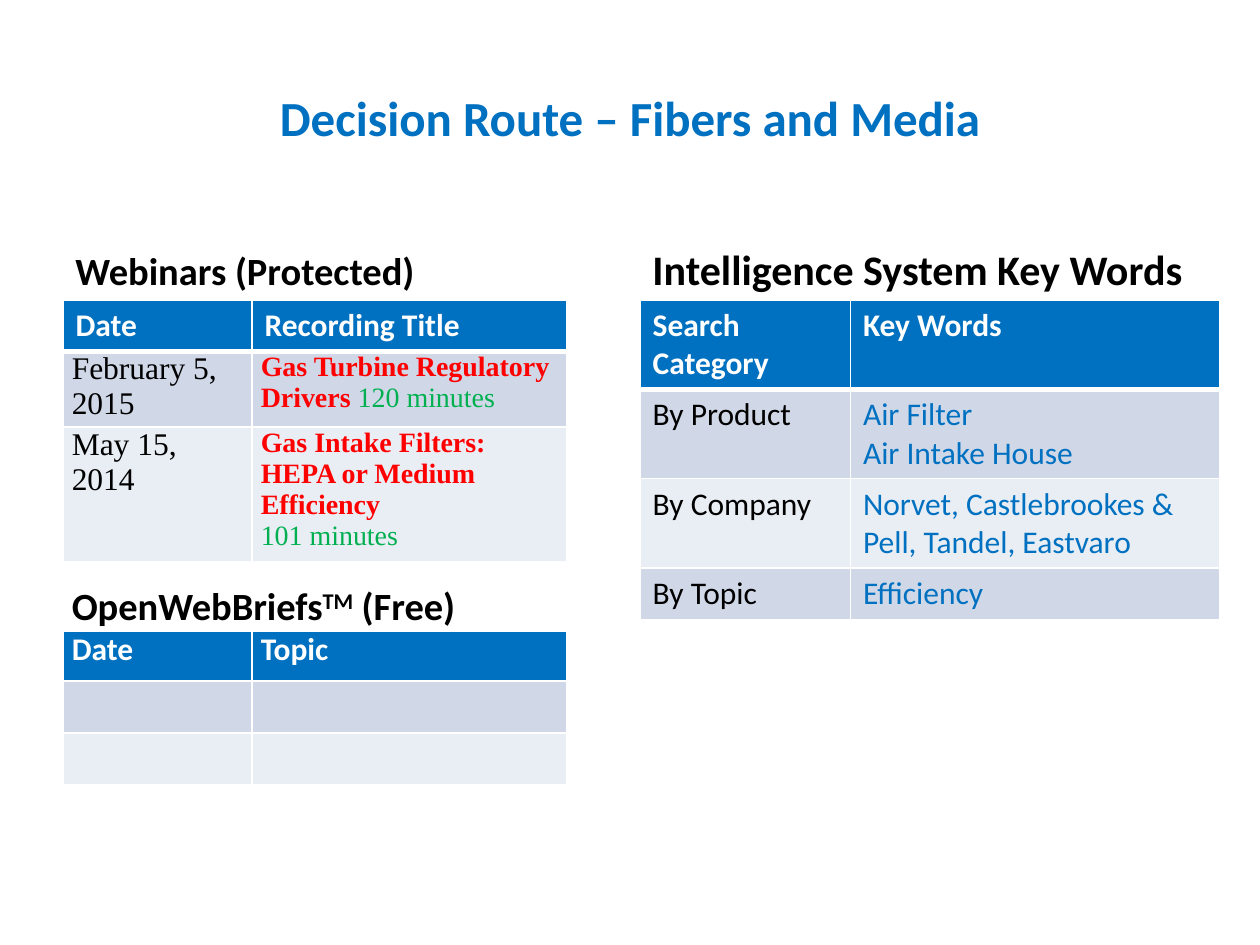
from dataclasses import dataclass

from lxml.etree import SubElement
from pptx import Presentation
from pptx.dml.color import RGBColor
from pptx.enum.text import MSO_ANCHOR as Anchor, PP_ALIGN as Align
from pptx.oxml.ns import qn
from pptx.util import Inches, Pt

BLUE = RGBColor(0x00, 0x70, 0xC0)
BLACK = RGBColor(0x00, 0x00, 0x00)
WHITE = RGBColor(0xFF, 0xFF, 0xFF)
RED = RGBColor(0xFF, 0x00, 0x00)
GREEN = RGBColor(0x00, 0xB0, 0x50)
BAND_DARK = RGBColor(0xD0, 0xD8, 0xE8)
BAND_LIGHT = RGBColor(0xE9, 0xED, 0xF4)
SANS, SERIF = "Calibri", "Times New Roman"


@dataclass
class Style:
    """Look of one run of text."""
    size: int = 18
    color: RGBColor = BLACK
    bold: bool = False
    font: str = SANS
    superscript: bool = False


HEADER = Style(color=WHITE, bold=True)
LABEL = Style()
KEYWORD = Style(color=BLUE)
DATE = Style(font=SERIF)
RECORDING = Style(16, RED, True, SERIF)
DURATION = Style(16, GREEN, False, SERIF)
HEADING = Style(22, bold=True)
TRADEMARK = Style(22, bold=True, superscript=True)


class SlideBuilder:
    def __init__(self, slide):
        self.slide = slide

    def fill_text(self, text_frame, paragraphs, align=Align.LEFT):
        """Fill a frame; each paragraph is a list of (text, style) runs."""
        for index, runs in enumerate(paragraphs):
            paragraph = text_frame.add_paragraph() if index else text_frame.paragraphs[0]
            paragraph.alignment = align
            for text, style in runs:
                run = paragraph.add_run()
                run.text = text
                run.font.name = style.font
                run.font.size = Pt(style.size)
                run.font.bold = style.bold
                run.font.color.rgb = style.color
                if style.superscript:
                    run._r.get_or_add_rPr().set("baseline", "30000")

    def text(self, left, top, width, height, text, style, anchor, align=Align.LEFT):
        box = self.slide.shapes.add_textbox(
            Inches(left), Inches(top), Inches(width), Inches(height))
        text_frame = box.text_frame
        text_frame.word_wrap = True
        text_frame.vertical_anchor = anchor
        self.fill_text(text_frame, [[(text, style)]], align)

    def borders(self, cell, bottom=1):
        properties = cell._tc.get_or_add_tcPr()
        for side, width in (("L", 1), ("R", 1), ("T", 1), ("B", bottom)):
            line = SubElement(properties, qn(f"a:ln{side}"), w=str(Pt(width)))
            fill = SubElement(line, qn("a:solidFill"))
            SubElement(fill, qn("a:srgbClr"), val=str(WHITE))

    def table(self, left, top, widths, heights, rows, fills, tight_rows=()):
        shape = self.slide.shapes.add_table(
            len(rows), len(widths), Inches(left), Inches(top),
            Inches(sum(widths)), Inches(sum(heights)))
        table = shape.table
        for column, width in zip(table.columns, widths):
            column.width = Inches(width)
        for index, (contents, height, fill) in enumerate(zip(rows, heights, fills)):
            table.rows[index].height = Inches(height)
            for cell, paragraphs in zip(table.rows[index].cells, contents):
                self.borders(cell, 1 if index else 3)
                if fill is None:
                    cell.fill.background()
                else:
                    cell.fill.solid()
                    cell.fill.fore_color.rgb = fill
                if index in tight_rows:
                    cell.margin_left = cell.margin_right = Inches(0.07)
                    cell.margin_top = cell.margin_bottom = 0
                self.fill_text(cell.text_frame, paragraphs)
        return table


def lines(style, *texts):
    """One single-run paragraph for each text."""
    return [[(text, style)] for text in texts]


def main():
    presentation = Presentation()
    presentation.slide_width, presentation.slide_height = Inches(10), Inches(7.5)
    builder = SlideBuilder(presentation.slides.add_slide(presentation.slide_layouts[6]))

    # Title and column headings
    builder.text(0.5, 0.3, 9, 1.25, "Decision Route – Fibers and Media",
                 Style(28, BLUE, True), Anchor.MIDDLE, Align.CENTER)
    builder.text(0.5, 1.68, 4.42, 0.7, "Webinars (Protected)", HEADING, Anchor.BOTTOM)
    builder.text(5.08, 1.68, 4.42, 0.7, "Intelligence System Key Words",
                 Style(24, bold=True), Anchor.BOTTOM)

    # Webinars, with the free series below
    webinar_rows = [
        [lines(HEADER, "Date"), lines(HEADER, "Recording Title")],
        [lines(DATE, "February 5, 2015"),
         [[("Gas Turbine Regulatory Drivers ", RECORDING), ("120 minutes", DURATION)]]],
        [lines(DATE, "May 15, 2014"),
         lines(RECORDING, "Gas Intake Filters: HEPA or Medium Efficiency")
         + lines(DURATION, "101 minutes")],
        [[[("OpenWebBriefs", HEADING), ("TM", TRADEMARK), (" (Free)", HEADING)]], []],
        [lines(HEADER, "Date"), lines(HEADER, "Topic")],
        [[], []],
        [[], []],
    ]
    section = [BLUE, BAND_DARK, BAND_LIGHT]
    webinars = builder.table(
        0.5, 2.38, [1.5, 2.5], [0.41, 0.54, 0.99, 0.55, 0.4, 0.41, 0.41],
        webinar_rows, section + [None] + section, tight_rows=range(1, 5))
    webinars.cell(3, 0).merge(webinars.cell(3, 1))
    webinars.cell(3, 0).vertical_anchor = Anchor.BOTTOM

    # Key words by search category
    keyword_rows = [
        [lines(HEADER, "Search Category"), lines(HEADER, "Key Words")],
        [lines(LABEL, "By Product"), lines(KEYWORD, "Air Filter", "Air Intake House")],
        [lines(LABEL, "By Company"),
         lines(KEYWORD, "Norvet, Castlebrookes & Pell, Tandel, Eastvaro")],
        [lines(LABEL, "By Topic"), lines(KEYWORD, "Efficiency")],
    ]
    builder.table(5.08, 2.38, [1.67, 2.93], [0.71, 0.71, 0.71, 0.41],
                  keyword_rows, section + [BAND_DARK])

    presentation.save("out.pptx")


if __name__ == "__main__":
    main()
